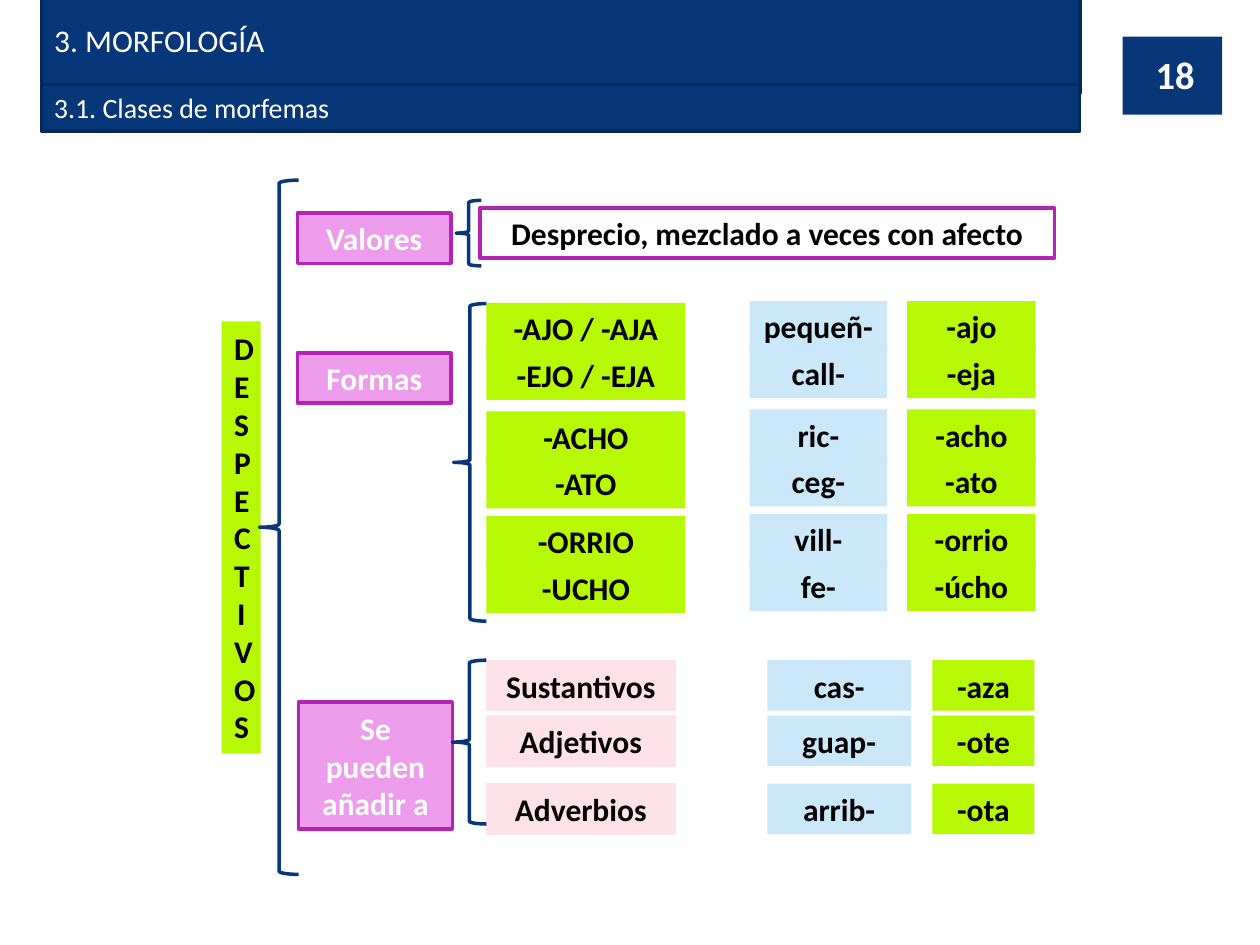
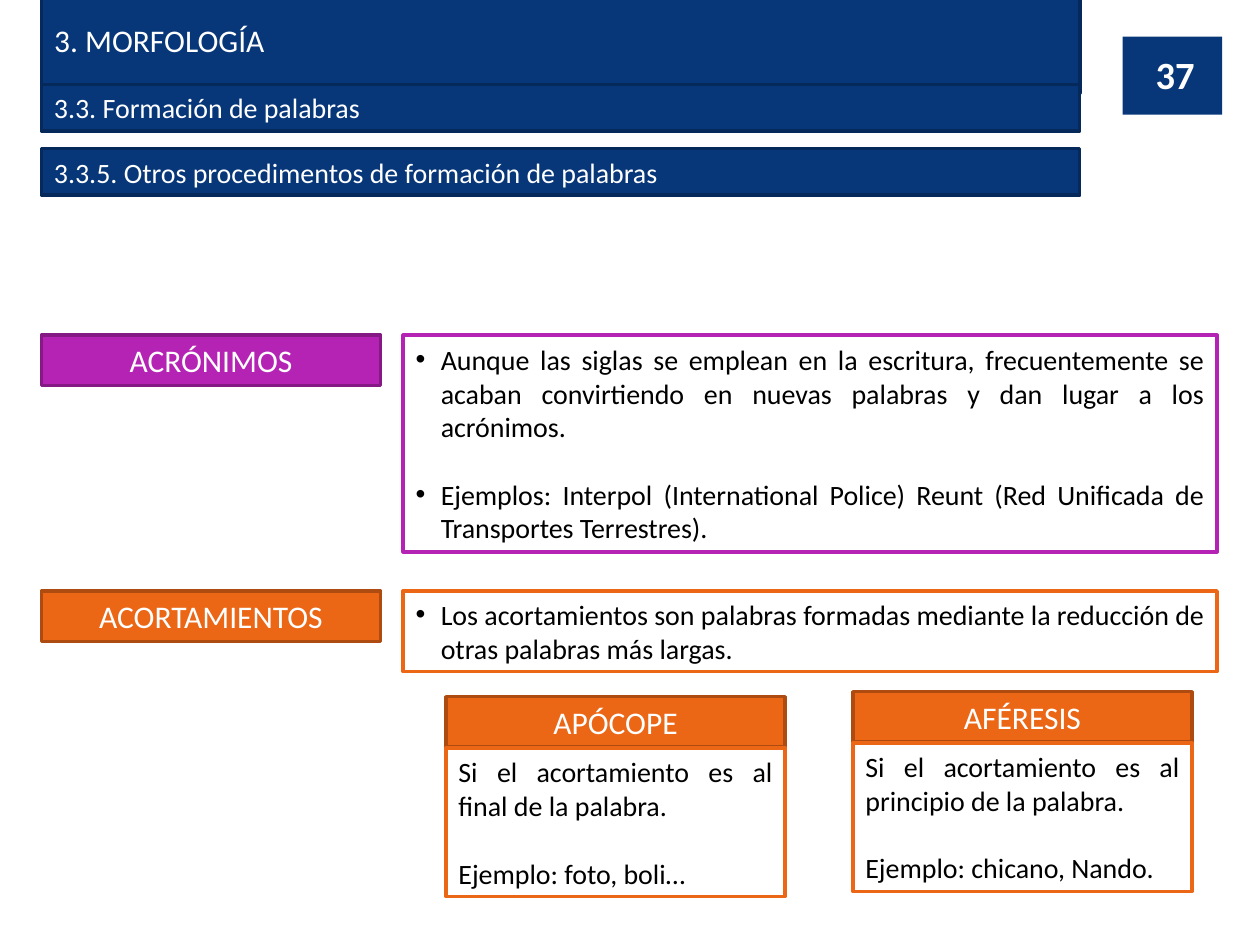
"""Build two Spanish morphology slides: pejorative suffixes and word shortening."""
import dataclasses
import itertools
import typing

import pptx
import pptx.dml.color
import pptx.enum.shapes
import pptx.enum.text
import pptx.oxml.ns
import pptx.shapes.autoshape
import pptx.slide
import pptx.util
from lxml import etree

COLUMNS, ROWS = 100, 75
SLIDE_WIDTH, SLIDE_HEIGHT = pptx.util.Inches(10), pptx.util.Inches(7.5)
COLUMN, ROW = SLIDE_WIDTH / COLUMNS, SLIDE_HEIGHT / ROWS
FONT = "Calibri"
COLOURS = {
    "navy": "073779", "navy edge": "05295A", "lime": "B7F904", "sky": "CAE8F9",
    "rose": "FFE1EA", "orchid": "EC9CEB", "purple": "B523B4", "purple edge": "861A85",
    "orange": "EB6615", "orange edge": "AE4B10", "white": "FFFFFF", "black": "000000",
}
LEFT, CENTRE, RIGHT, JUSTIFY = (
    pptx.enum.text.PP_ALIGN.LEFT, pptx.enum.text.PP_ALIGN.CENTER,
    pptx.enum.text.PP_ALIGN.RIGHT, pptx.enum.text.PP_ALIGN.JUSTIFY,
)
BAND_HEIGHT = 4
HEADING_WIDTH = 26.9


class Frame(typing.NamedTuple):
    """Left and width in grid columns, top and height in grid rows."""

    left: float
    top: float
    width: float
    height: float = BAND_HEIGHT


@dataclasses.dataclass(frozen=True)
class Style:
    """Look of a box and of its text."""

    fill: str | None
    edge: str | None = None
    edge_width: float = 2
    ink: str = "black"
    size: float = 18
    bold: bool = True
    align: typing.Any = CENTRE
    bullet: bool = False
    grow: bool = True


TITLE = Style("navy", "navy edge", ink="white", bold=False, align=LEFT)
SUBTITLE = dataclasses.replace(TITLE, size=16)
BADGE = Style("navy", grow=False)
NUMBER = Style(None, ink="white", size=22, align=RIGHT, grow=False)
SUFFIX = Style("lime")
STEM = Style("sky")
WORD_CLASS = Style("rose", "rose", 0.75)
BRANCH = Style("orchid", "purple", ink="white")
MEANING = Style("white", "purple")
ACRONYM = Style("purple", "purple edge", ink="white", bold=False)
SHORTENING = Style("orange", "orange edge", ink="white", bold=False)
ACRONYM_NOTE = Style("white", "purple", size=16, bold=False, align=JUSTIFY, bullet=True)
SHORTENING_NOTE = dataclasses.replace(ACRONYM_NOTE, edge="orange")
KIND_NOTE = dataclasses.replace(SHORTENING_NOTE, bullet=False)


def colour(name: str) -> pptx.dml.color.RGBColor:
    """Return the named colour of the palette."""
    return pptx.dml.color.RGBColor.from_string(COLOURS[name])


def set_values(target: typing.Any, values: dict[str, typing.Any]) -> None:
    """Set each attribute of the target from a dict."""
    for name, value in values.items():
        setattr(target, name, value)


def emu(frame: Frame) -> dict[str, int]:
    """Turn a grid frame into slide lengths."""
    units = (COLUMN, ROW, COLUMN, ROW)
    return {name: round(share * unit)
            for (name, share), unit in zip(frame._asdict().items(), units)}


def add_bullet(para: typing.Any) -> None:
    """Give a paragraph a hanging bullet."""
    properties = para._p.get_or_add_pPr()
    indent = pptx.util.Inches(0.2)
    properties.set("marL", str(indent))
    properties.set("indent", str(-indent))
    etree.SubElement(properties, pptx.oxml.ns.qn("a:buFont")).set("typeface", "Arial")
    etree.SubElement(properties, pptx.oxml.ns.qn("a:buChar")).set("char", "•")


def paint(box: typing.Any, style: Style) -> None:
    """Set the fill and outline of a box."""
    box.shadow.inherit = False
    if style.fill:
        box.fill.solid()
        box.fill.fore_color.rgb = colour(style.fill)
    else:
        box.fill.background()
    if style.edge:
        box.line.color.rgb = colour(style.edge)
        box.line.width = pptx.util.Pt(style.edge_width)
    else:
        box.line.fill.background()


def write(box: typing.Any, lines: typing.Sequence[str], style: Style) -> None:
    """Fill a box with paragraphs one blank line apart."""
    sizing = pptx.enum.text.MSO_AUTO_SIZE
    set_values(box.text_frame, {
        "word_wrap": True,
        "auto_size": sizing.SHAPE_TO_FIT_TEXT if style.grow else sizing.NONE,
        "vertical_anchor": pptx.enum.text.MSO_ANCHOR.MIDDLE,
    })
    for index, line in enumerate(lines):
        para = box.text_frame.add_paragraph() if index else box.text_frame.paragraphs[0]
        gap = pptx.util.Pt(style.size * 1.22 if index else 0)
        set_values(para, {"alignment": style.align, "space_before": gap})
        if style.bullet:
            add_bullet(para)
        span = para.add_run()
        span.text = line
        set_values(span.font, {"name": FONT, "size": pptx.util.Pt(style.size), "bold": style.bold})
        span.font.color.rgb = colour(style.ink)


def add_box(page: pptx.slide.Slide, frame: Frame, style: Style, *lines: str) -> None:
    """Draw a rectangle with its text."""
    box = page.shapes.add_shape(pptx.enum.shapes.MSO_SHAPE.RECTANGLE, *emu(frame).values())
    paint(box, style)
    write(box, lines, style)


def add_brace(page: pptx.slide.Slide, frame: Frame) -> None:
    """Draw an opening brace."""
    brace = page.shapes.add_shape(pptx.enum.shapes.MSO_SHAPE.LEFT_BRACE, *emu(frame).values())
    paint(brace, Style(None, "navy"))


def add_page(deck: typing.Any, number: str, *subtitles: str) -> pptx.slide.Slide:
    """Add a page with its number, title and subtitle bands."""
    page = deck.slides.add_slide(deck.slide_layouts[5])
    title = page.shapes.title
    set_values(title, emu(Frame(3.3, 1.2, 82.4)))
    paint(title, TITLE)
    write(title, ["3. MORFOLOGÍA"], TITLE)
    for index, subtitle in enumerate(subtitles):
        add_box(page, Frame(3.3, 6.7 + 5.1 * index, 82.4, 3.7), SUBTITLE, subtitle)
    add_box(page, Frame(89.1, 2.9, 7.9, 6.2), BADGE)
    label = page.shapes.add_textbox(*emu(Frame(90.3, 3.9, 5.5)).values())
    write(label, [number], NUMBER)
    return page


def add_pejoratives(deck: typing.Any) -> None:
    """Draw the tree of pejorative suffixes."""
    page = add_page(deck, "18", "3.1. Clases de morfemas")
    add_box(page, Frame(17.6, 25.5, 3.1, 34.3), SUFFIX, "DESPECTIVOS")
    branches = (
        (Frame(23.6, 16.9, 12.2), "Valores"),
        (Frame(23.6, 28, 12.2), "Formas"),
        (Frame(23.7, 55.7, 12.2, 10.1), "Se pueden añadir a"),
    )
    for frame, name in branches:
        add_box(page, frame, BRANCH, name)
    add_box(page, Frame(38.1, 16.5, 45.6), MEANING, "Desprecio, mezclado a veces con afecto")

    forms = (
        ("-AJO / -AJA", "pequeñ-", "-ajo"), ("-EJO / -EJA", "call-", "-eja"),
        ("-ACHO", "ric-", "-acho"), ("-ATO", "ceg-", "-ato"),
        ("-ORRIO", "vill-", "-orrio"), ("-UCHO", "fe-", "-úcho"),
    )
    pair_tops = (23.9, 32.5, 40.8)
    form_tops = (top + step for top, step in itertools.product(pair_tops, (0, 3.7)))
    for top, (form, stem, suffix) in zip(form_tops, forms):
        add_box(page, Frame(38.6, top + 0.15, 15.8), SUFFIX, form)
        add_box(page, Frame(59.5, top, 10.9), STEM, stem)
        add_box(page, Frame(72, top, 10.2), SUFFIX, suffix)

    word_classes = (
        (52.4, "Sustantivos", "cas-", "-aza"),
        (56.8, "Adjetivos", "guap-", "-ote"),
        (62.2, "Adverbios", "arrib-", "-ota"),
    )
    for top, word_class, stem, suffix in word_classes:
        add_box(page, Frame(38.6, top, 15), WORD_CLASS, word_class)
        add_box(page, Frame(60.9, top, 11.4), STEM, stem)
        add_box(page, Frame(74, top, 8.1), SUFFIX, suffix)

    braces = (
        Frame(20.6, 14.3, 3.1, 55.1), Frame(36.2, 15.9, 2, 5.2),
        Frame(36, 24.1, 2.6, 25.2), Frame(35.9, 52.4, 2.7, 13),
    )
    for frame in braces:
        add_brace(page, frame)


def add_shortenings(deck: typing.Any) -> None:
    """Draw the definitions of acronyms and shortenings."""
    page = add_page(deck, "37", "3.3. Formación de palabras",
                    "3.3.5. Otros procedimentos de formación de palabras")
    definitions = (
        (26.6, 17.2, "ACRÓNIMOS", ACRONYM, ACRONYM_NOTE, (
            "Aunque las siglas se emplean en la escritura, frecuentemente se acaban "
            "convirtiendo en nuevas palabras y dan lugar a los acrónimos.",
            "Ejemplos: Interpol (International Police) Reunt (Red Unificada de "
            "Transportes Terrestres).")),
        (46.9, 6.4, "ACORTAMIENTOS", SHORTENING, SHORTENING_NOTE, (
            "Los acortamientos son palabras formadas mediante la reducción de otras "
            "palabras más largas.",)),
    )
    for top, height, heading, style, note_style, notes in definitions:
        add_box(page, Frame(3.3, top, HEADING_WIDTH), style, heading)
        add_box(page, Frame(32, top, 64.6, height), note_style, *notes)

    kinds = (
        (35.4, 55.3, "APÓCOPE", "final", "foto, boli…"),
        (67.7, 54.9, "AFÉRESIS", "principio", "chicano, Nando."),
    )
    for left, top, heading, place, examples in kinds:
        add_box(page, Frame(left, top, HEADING_WIDTH), SHORTENING, heading)
        add_box(page, Frame(left, top + 4.05, HEADING_WIDTH, 11.8), KIND_NOTE,
                f"Si el acortamiento es al {place} de la palabra.", f"Ejemplo: {examples}")


def main() -> None:
    """Build and save the deck."""
    deck = pptx.Presentation()
    set_values(deck, {"slide_width": SLIDE_WIDTH, "slide_height": SLIDE_HEIGHT})
    add_pejoratives(deck)
    add_shortenings(deck)
    deck.save("out.pptx")


if __name__ == "__main__":
    main()
